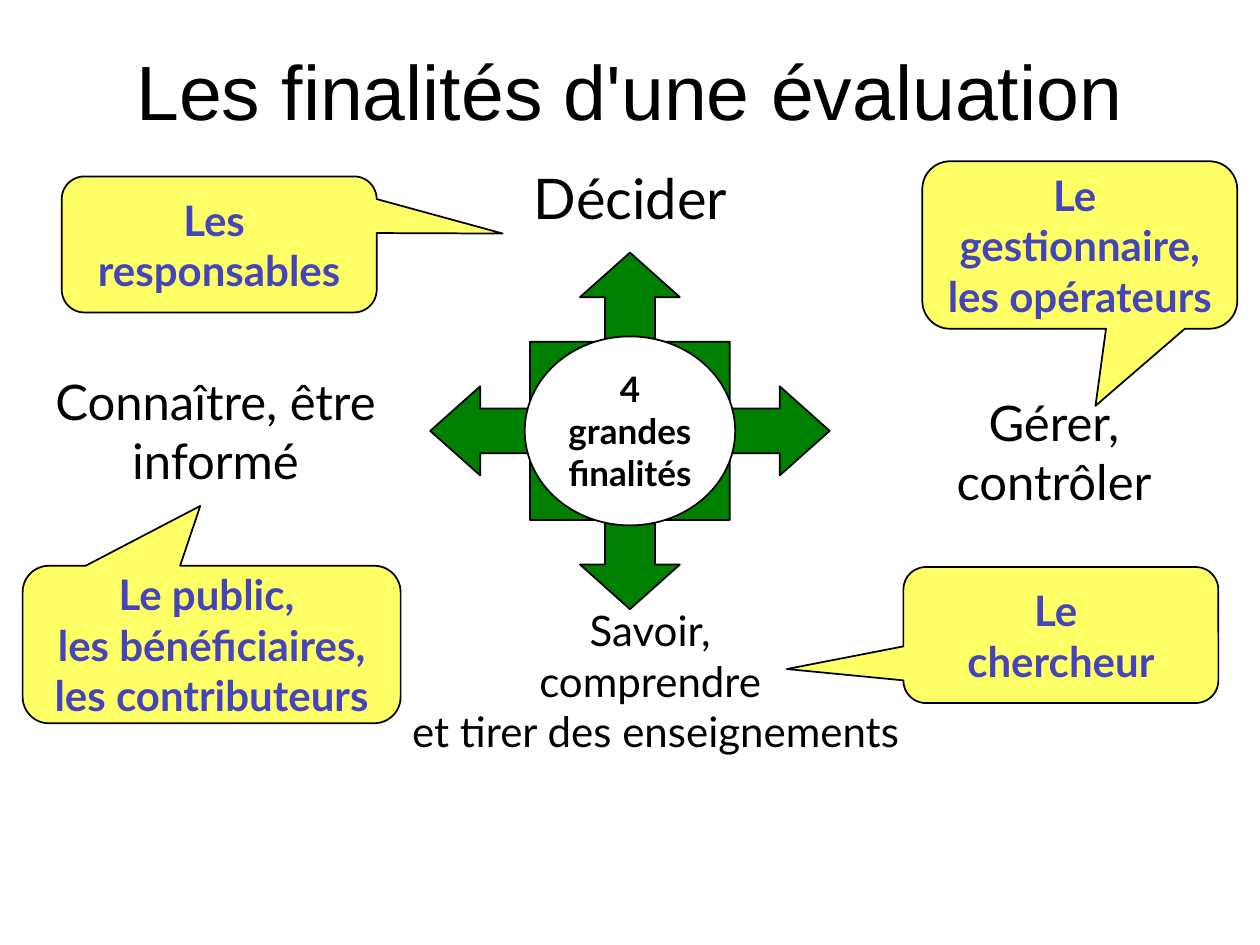
from dataclasses import dataclass

from pptx import Presentation
from pptx.dml.color import RGBColor
from pptx.enum.shapes import MSO_SHAPE
from pptx.enum.text import MSO_ANCHOR, PP_ALIGN
from pptx.util import Inches, Pt

CALLOUT = MSO_SHAPE.ROUNDED_RECTANGULAR_CALLOUT
OVAL = MSO_SHAPE.OVAL
MIDDLE = MSO_ANCHOR.MIDDLE
CENTER = PP_ALIGN.CENTER


@dataclass(frozen=True)
class Theme:
    black: RGBColor = RGBColor(0x00, 0x00, 0x00)
    white: RGBColor = RGBColor(0xFF, 0xFF, 0xFF)
    yellow: RGBColor = RGBColor(0xFF, 0xFF, 0x66)
    green: RGBColor = RGBColor(0x00, 0x80, 0x00)
    violet: RGBColor = RGBColor(0x45, 0x45, 0xBB)
    title_font: str = "Arial"
    body_font: str = "Lato"
    title_size: int = 44
    large_label_size: int = 32
    label_size: int = 28
    small_label_size: int = 24
    callout_size: int = 24
    hub_size: int = 20
    line_width: int = 1


class PurposePage:
    def __init__(self, deck, theme):
        self.theme = theme
        self.page = deck.slides.add_slide(deck.slide_layouts[5])

    def add_lines(self, frame, lines, size, color, bold=False, font=None):
        for index, line in enumerate(lines):
            para = frame.paragraphs[0] if index == 0 else frame.add_paragraph()
            para.alignment = CENTER
            span = para.add_run()
            span.text = line
            span.font.name = font or self.theme.body_font
            span.font.size = Pt(size)
            span.font.bold = bold
            span.font.color.rgb = color

    def paint(self, shape, fill):
        shape.shadow.inherit = False
        shape.fill.solid()
        shape.fill.fore_color.rgb = fill
        shape.line.color.rgb = self.theme.black
        shape.line.width = Pt(self.theme.line_width)

    def title(self, text, left, top, width, height):
        box = self.page.shapes.title
        box.left, box.top = Inches(left), Inches(top)
        box.width, box.height = Inches(width), Inches(height)
        box.text_frame.vertical_anchor = MIDDLE
        self.add_lines(box.text_frame, [text], self.theme.title_size,
                       self.theme.black, font=self.theme.title_font)

    def label(self, lines, size, *area):
        box = self.page.shapes.add_textbox(*map(Inches, area))
        box.text_frame.word_wrap = True
        self.add_lines(box.text_frame, lines, size, self.theme.black)

    def callout(self, lines, tip, *area):
        box = self.page.shapes.add_shape(CALLOUT, *map(Inches, area))
        box.adjustments[0], box.adjustments[1] = tip
        self.paint(box, self.theme.yellow)
        frame = box.text_frame
        frame.margin_left = frame.margin_right = Inches(0.06)
        frame.margin_top = frame.margin_bottom = Inches(0.01)
        frame.word_wrap = False
        frame.vertical_anchor = MIDDLE
        self.add_lines(frame, lines, self.theme.callout_size, self.theme.violet, True)

    def four_way_arrow(self, center_x, center_y, width, height):
        arm = [(-4, -4), (-1, -4), (-1, -6), (-2, -6),
               (0, -8), (2, -6), (1, -6), (1, -4)]
        outline = []
        for _ in range(4):
            outline += arm
            arm = [(-y, x) for x, y in arm]
        scale = (Inches(width) / 16, Inches(height) / 16)
        builder = self.page.shapes.build_freeform(*outline[0], scale=scale)
        builder.add_line_segments(outline[1:], close=True)
        arrow = builder.convert_to_shape(Inches(center_x), Inches(center_y))
        self.paint(arrow, self.theme.green)

    def hub(self, lines, center_x, center_y, width, height):
        area = (center_x - width / 2, center_y - height / 2, width, height)
        oval = self.page.shapes.add_shape(OVAL, *map(Inches, area))
        self.paint(oval, self.theme.white)
        oval.text_frame.word_wrap = False
        oval.text_frame.vertical_anchor = MIDDLE
        self.add_lines(oval.text_frame, lines, self.theme.hub_size, self.theme.black, True)


def main():
    deck = Presentation()
    deck.slide_width, deck.slide_height = Inches(10), Inches(7.5)
    theme = Theme()
    page = PurposePage(deck, theme)
    center = (5, 3.42)

    page.title("Les finalités d'une évaluation", 0.5, 0.3, 9, 0.82)
    page.label(["Savoir,", "comprendre", " et tirer des enseignements"],
               theme.small_label_size, 1.12, 4.75, 8.08, 1.3)
    page.label(["Gérer, contrôler"], theme.label_size, 7.03, 3.07, 2.67, 1.03)
    page.label(["Décider"], theme.large_label_size, 3.67, 1.25, 2.67, 0.63)
    page.callout(["Les ", "responsables"], (0.9, -0.08), 0.49, 1.4, 2.5, 1.08)
    page.callout(["Le ", "gestionnaire,", "les opérateurs"],
                 (0.05, 0.96), 7.32, 1.28, 2.5, 1.33)
    page.callout(["Le ", "chercheur"], (-0.87, 0.25), 7.17, 4.5, 2.5, 1.08)
    page.four_way_arrow(*center, 3.17, 2.83)
    page.label(["Connaître, être informé"], theme.label_size, 0, 2.9, 3.42, 1.03)
    page.callout(["Le public, ", "les bénéficiaires,", "les contributeurs"],
                 (-0.03, -0.88), 0.18, 4.49, 3, 1.25)
    page.hub(["4", "grandes", "finalités"], *center, 1.67, 1.5)

    deck.save("out.pptx")


if __name__ == "__main__":
    main()
